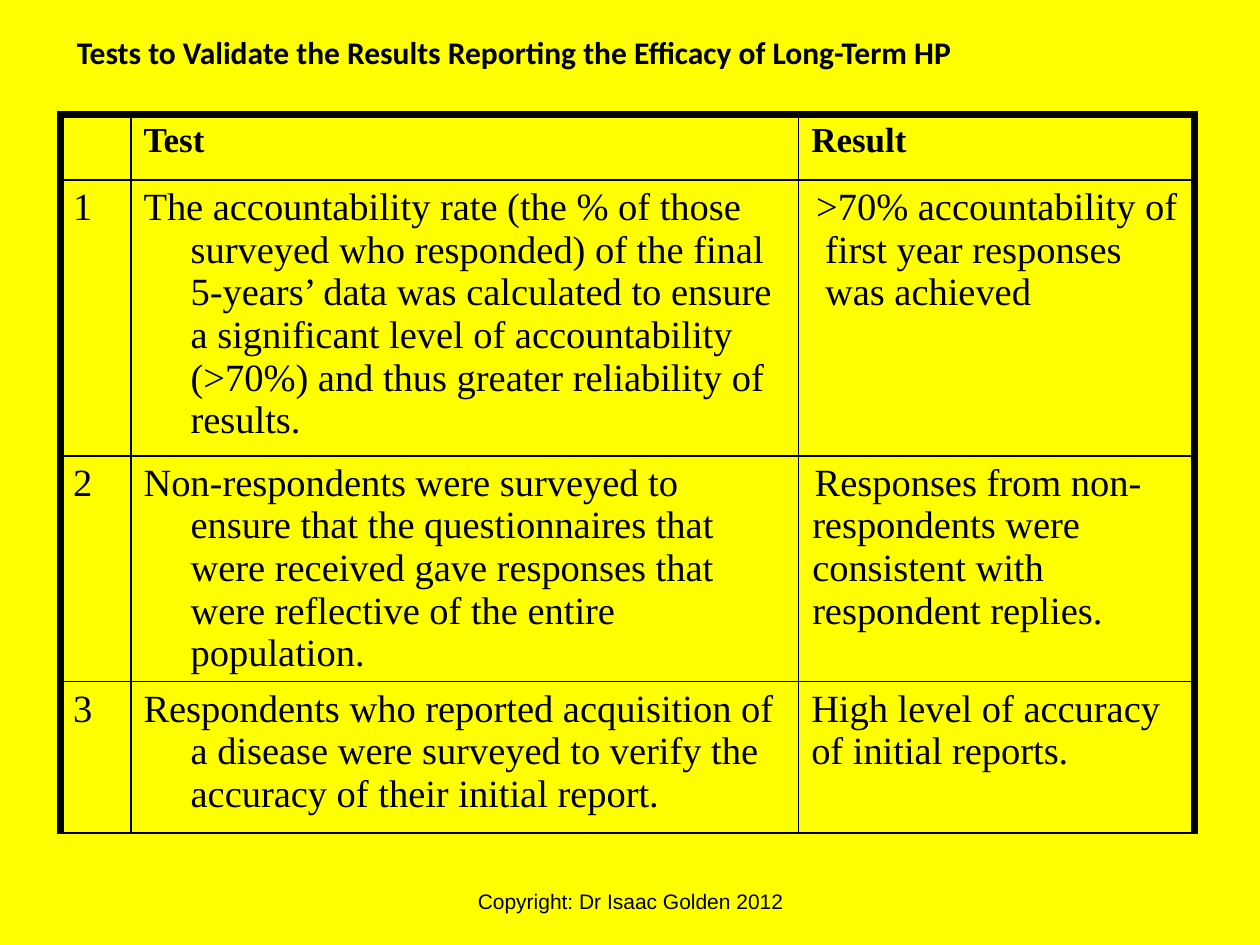
from lxml.etree import SubElement
from pptx import Presentation
from pptx.dml.color import RGBColor
from pptx.enum.text import MSO_ANCHOR, MSO_AUTO_SIZE, PP_ALIGN
from pptx.oxml.ns import qn
from pptx.util import Cm, Pt

COLORS = {"background": "FFFF00", "ink": "000000"}
HANGING = (0.95, -0.95)
COLUMNS = (1.42, 13.46, 7.98)
HEIGHTS = (1.32, 5.56, 4.29, 3.05)
HEADER = ("", "Test", "Result")
TESTS = (
    ("1",
     "The accountability rate (the % of those surveyed who responded) of the final "
     "5-years’ data was calculated to ensure a significant level of accountability "
     "(>70%) and thus greater reliability of results.",
     ">70% accountability of first year responses was achieved"),
    ("2",
     "Non-respondents were surveyed to ensure that the questionnaires that were "
     "received gave responses that were reflective of the entire population.",
     "Responses from non-respondents were consistent with respondent replies."),
    ("3",
     "Respondents who reported acquisition of a disease were surveyed to verify the "
     "accuracy of their initial report.",
     "High level of accuracy of initial reports."),
)
RESULT_INDENTS = (HANGING, (0.28, -0.18), (0.02, 0.05), (0, 0))


def write(tf, text, size=22, font="Times New Roman", bold=False, align=None, indent=(0, 0)):
    """Write one formatted paragraph into a text frame."""
    p = tf.paragraphs[0]
    if align is not None:
        p.alignment = align
    left, first = indent
    pPr = p._p.get_or_add_pPr()
    pPr.set("marL", str(Cm(left)))
    pPr.set("indent", str(Cm(first)))
    if text:
        r = p.add_run()
        r.text = text
        r.font.size = Pt(size)
        r.font.name = font
        r.font.bold = bold
        r.font.color.rgb = RGBColor.from_string(COLORS["ink"])


def set_borders(cell, **widths):
    """Draw the cell borders, given as side=points."""
    tcPr = cell._tc.get_or_add_tcPr()
    for side in "LRTB":
        ln = SubElement(tcPr, qn(f"a:ln{side}"), w=str(Pt(widths[side])))
        fill = SubElement(ln, qn("a:solidFill"))
        SubElement(fill, qn("a:srgbClr"), val=COLORS["ink"])


def add_tests_table(s, left, top):
    """Place the table of tests with a thick frame open at the bottom."""
    rows = (HEADER, *TESTS)
    table = s.shapes.add_table(len(rows), len(COLUMNS), Cm(left), Cm(top),
                               Cm(sum(COLUMNS)), Cm(sum(HEIGHTS))).table
    table.first_row = table.horz_banding = False
    for column, width in zip(table.columns, COLUMNS):
        column.width = Cm(width)
    last = len(COLUMNS) - 1
    for i, texts in enumerate(rows):
        table.rows[i].height = Cm(HEIGHTS[i])
        for j, text in enumerate(texts):
            cell = table.cell(i, j)
            set_borders(cell, L=5 if j == 0 else 1, R=5 if j == last else 1,
                        T=5 if i == 0 else 1, B=1)
            cell.fill.background()
            write(cell.text_frame, text, size=20 if i == 0 else 22, bold=i == 0,
                  indent=RESULT_INDENTS[i] if j == last else HANGING)


def add_text(s, left, top, width, height, text, grow=False, **style):
    """Place a wrapping, vertically centred text box."""
    tf = s.shapes.add_textbox(Cm(left), Cm(top), Cm(width), Cm(height)).text_frame
    tf.word_wrap = True
    tf.vertical_anchor = MSO_ANCHOR.MIDDLE
    if grow:
        tf.auto_size = MSO_AUTO_SIZE.SHAPE_TO_FIT_TEXT
    write(tf, text, **style)


def main():
    """Build and save the slide."""
    prs = Presentation()
    prs.slide_width, prs.slide_height = Cm(25.4), Cm(19.05)
    s = prs.slides.add_slide(prs.slide_layouts[6])
    s.background.fill.solid()
    s.background.fill.fore_color.rgb = RGBColor.from_string(COLORS["background"])
    add_tests_table(s, 1.22, 2.31)
    add_text(s, 1.3, 0.53, 21.9, 1.02,
             "Tests to Validate the Results Reporting the Efficacy of Long-Term HP",
             grow=True, size=18, font="Calibri", bold=True)
    add_text(s, 8.69, 17.65, 8.05, 1.02, "Copyright: Dr Isaac Golden 2012",
             size=12, font="Arial", align=PP_ALIGN.CENTER)
    prs.save("out.pptx")


if __name__ == "__main__":
    main()
